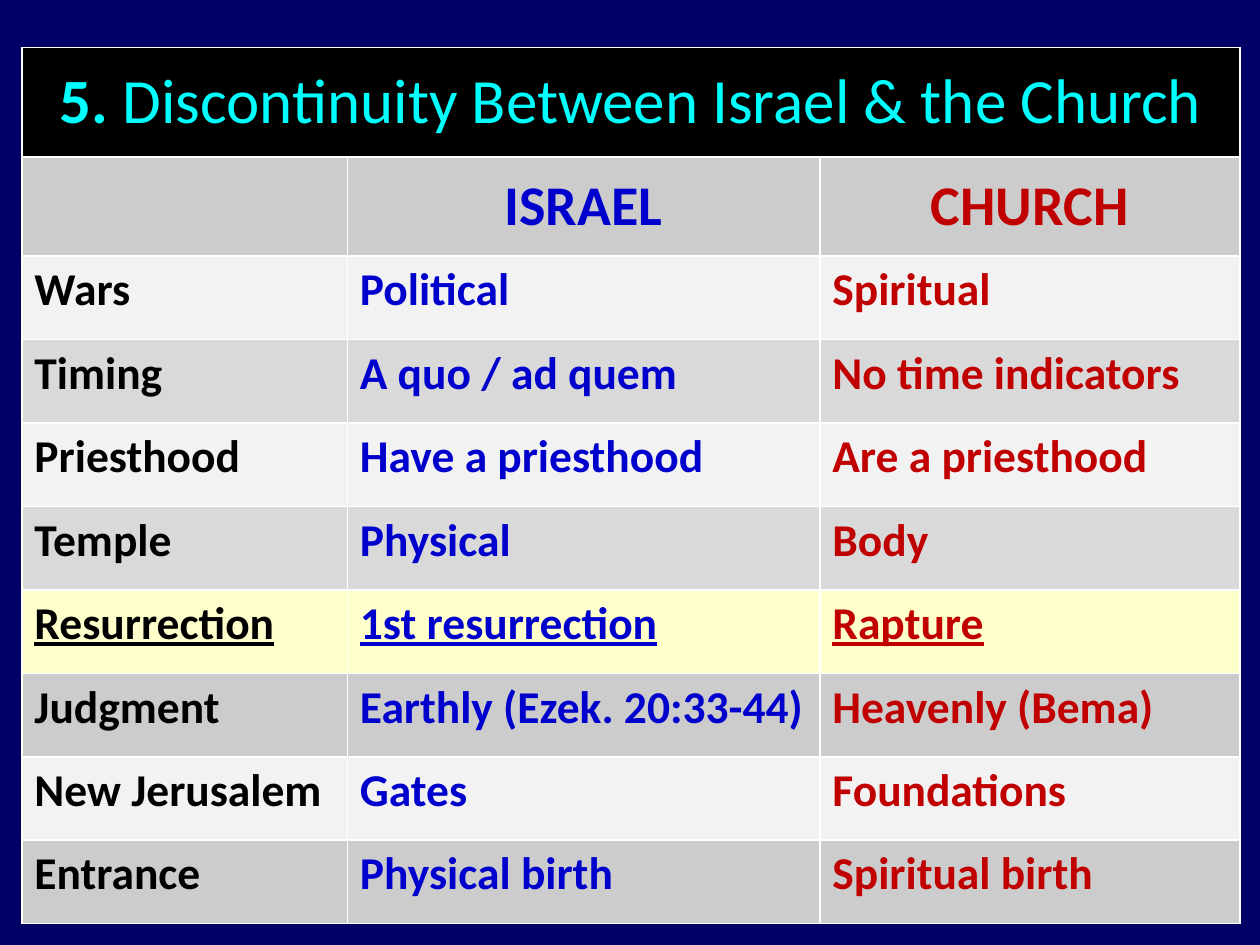
import pptx
import pptx.util
import pptx.dml.color
import pptx.enum.text
from dataclasses import dataclass

Pt = pptx.util.Pt
PP_ALIGN = pptx.enum.text.PP_ALIGN
MIDDLE = pptx.enum.text.MSO_ANCHOR.MIDDLE

TITLE = ("5. ", "Discontinuity Between Israel & the Church")
HEADINGS = ("", "ISRAEL", "CHURCH")
TOPICS = [
    ("Wars", "Political", "Spiritual"),
    ("Timing", "A quo / ad quem", "No time indicators"),
    ("Priesthood", "Have a priesthood", "Are a priesthood"),
    ("Temple", "Physical", "Body"),
    ("Resurrection", "1st resurrection", "Rapture"),
    ("Judgment", "Earthly (Ezek. 20:33-44)", "Heavenly (Bema)"),
    ("New Jerusalem", "Gates", "Foundations"),
    ("Entrance", "Physical birth", "Spiritual birth"),
]
CURRENT = "Resurrection"


@dataclass(frozen=True)
class Theme:
    font: str = "Calibri"
    background: str = "000066"
    title_fill: str = "000000"
    title_color: str = "00FFFF"
    heading_fill: str = "CCCCCC"
    current_fill: str = "FFFFCC"
    topic_fills: tuple = ("F2F2F2", "D9D9D9", "F2F2F2", "D9D9D9",
                          "F2F2F2", "CCCCCC", "F2F2F2", "CCCCCC")
    column_colors: tuple = ("000000", "0000CC", "C00000")
    title_size: int = 36
    heading_size: int = 32
    topic_size: int = 26


THEME = Theme()
LEFT, TOP = 12.5, 27.2
COLUMN_WIDTHS = (186, 270, 240)
TITLE_HEIGHT, HEADING_HEIGHT, TOPIC_HEIGHT = 62.6, 56.6, 47.7


def rgb(value):
    return pptx.dml.color.RGBColor.from_string(value)


def fill_solid(fill, color):
    fill.solid()
    fill.fore_color.rgb = rgb(color)


def style_cell(cell, fill, size, color, bold=True, centered=False):
    """Fill and format a cell, and return its paragraph."""
    fill_solid(cell.fill, fill)
    p = cell.text_frame.paragraphs[0]
    p.font.name = THEME.font
    p.font.size = Pt(size)
    p.font.bold = bold
    p.font.color.rgb = rgb(color)
    if centered:
        cell.vertical_anchor = MIDDLE
        p.alignment = PP_ALIGN.CENTER
        p.space_before = Pt(0.2 * size)
    else:
        p.space_before = p.space_after = Pt(6)
    return p


def add_title(table):
    cell = table.cell(0, 0)
    cell.merge(table.cell(0, len(COLUMN_WIDTHS) - 1))
    p = style_cell(cell, THEME.title_fill, THEME.title_size,
                   THEME.title_color, bold=False, centered=True)
    for text, bold in zip(TITLE, (True, False)):
        r = p.add_run()
        r.text = text
        r.font.bold = bold


def add_headings(table):
    for col, (text, color) in enumerate(zip(HEADINGS, THEME.column_colors)):
        p = style_cell(table.cell(1, col), THEME.heading_fill,
                       THEME.heading_size, color, centered=True)
        if text:
            p.add_run().text = text


def add_topics(table):
    for row, (topic, band) in enumerate(zip(TOPICS, THEME.topic_fills), 2):
        current = topic[0] == CURRENT
        fill = THEME.current_fill if current else band
        for col, (text, color) in enumerate(zip(topic, THEME.column_colors)):
            p = style_cell(table.cell(row, col), fill, THEME.topic_size, color)
            p.font.underline = current
            p.add_run().text = text


def main():
    prs = pptx.Presentation()
    prs.slide_width, prs.slide_height = Pt(720), Pt(540)
    s = prs.slides.add_slide(prs.slide_layouts[6])
    fill_solid(s.background.fill, THEME.background)

    heights = [TITLE_HEIGHT, HEADING_HEIGHT] + [TOPIC_HEIGHT] * len(TOPICS)
    table = s.shapes.add_table(
        len(heights), len(COLUMN_WIDTHS), Pt(LEFT), Pt(TOP),
        Pt(sum(COLUMN_WIDTHS)), Pt(sum(heights))).table
    for column, width in zip(table.columns, COLUMN_WIDTHS):
        column.width = Pt(width)
    for row, height in zip(table.rows, heights):
        row.height = Pt(height)

    add_title(table)
    add_headings(table)
    add_topics(table)
    prs.save("out.pptx")


if __name__ == "__main__":
    main()
